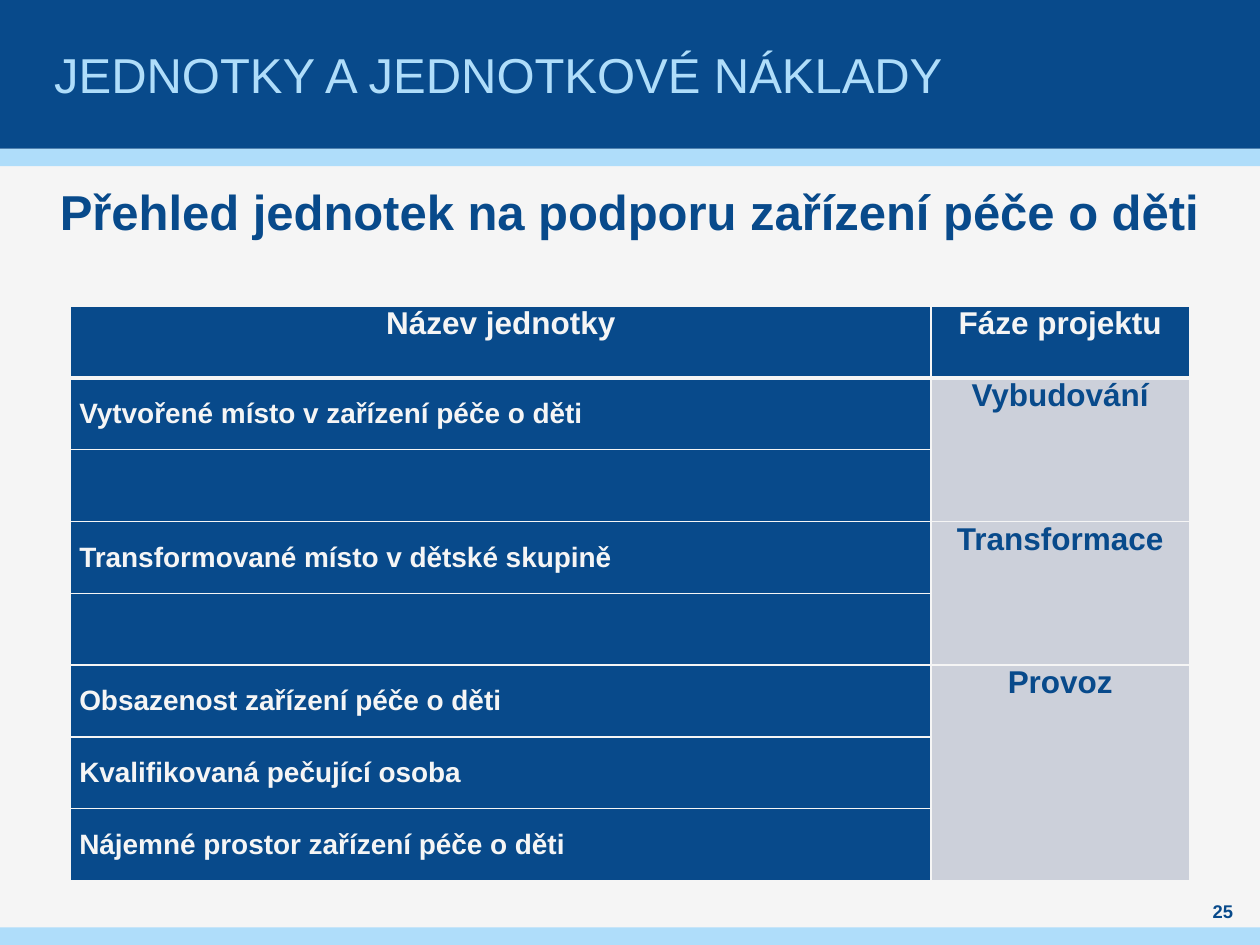
from dataclasses import dataclass

from lxml.etree import SubElement
from pptx import Presentation
from pptx.dml.color import RGBColor
from pptx.enum.shapes import MSO_SHAPE as Shape
from pptx.enum.text import MSO_ANCHOR as Anchor, PP_ALIGN as Align
from pptx.oxml.ns import qn
from pptx.util import Inches, Pt


@dataclass(frozen=True)
class Theme:
    font: str = "Arial"
    navy: str = "084A8B"
    sky: str = "AFDDFA"
    paper: str = "F5F5F5"
    grey: str = "CCD0DA"
    title: float = 28
    label: float = 18
    unit: float = 16
    number: float = 10.5


THEME = Theme()
COLUMNS = (6.83, 2.05)
ROW_HEIGHT = 0.57
HEADERS = ("Název jednotky", "Fáze projektu")
PHASES = (
    ("Vybudování", ("Vytvořené místo v zařízení péče o děti", "")),
    ("Transformace", ("Transformované místo v dětské skupině", "")),
    ("Provoz", (
        "Obsazenost zařízení péče o děti",
        "Kvalifikovaná pečující osoba",
        "Nájemné prostor zařízení péče o děti",
    )),
)


def paint(fill, color):
    fill.solid()
    fill.fore_color.rgb = RGBColor.from_string(color)


def write(frame, text, size, color, bold=True, align=Align.CENTER,
          anchor=Anchor.MIDDLE):
    frame.text = text
    frame.vertical_anchor = anchor
    paragraph = frame.paragraphs[0]
    paragraph.alignment = align
    font = paragraph.font
    font.name, font.size, font.bold = THEME.font, Pt(size), bold
    font.color.rgb = RGBColor.from_string(color)
    return paragraph


def set_margins(holder, side):
    holder.margin_left = holder.margin_right = Inches(side)
    holder.margin_top = holder.margin_bottom = 0


def add_band(slide, top, height, color):
    band = slide.shapes.add_shape(
        Shape.RECTANGLE, 0, Inches(top), Inches(10), Inches(height))
    band.shadow.inherit = False
    paint(band.fill, color)
    band.line.fill.background()


def add_title(slide, text):
    title = slide.shapes.title
    title.left, title.top = Inches(0.39), 0
    title.width, title.height = Inches(9.21), Inches(1.18)
    set_margins(title.text_frame, 0.04)
    write(title.text_frame, text, THEME.title, THEME.sky, False, Align.LEFT)


def add_label(slide, text, left, top, width, height, size):
    frame = slide.shapes.add_textbox(
        Inches(left), Inches(top), Inches(width), Inches(height)).text_frame
    frame.word_wrap = True
    set_margins(frame, 0)
    write(frame, text, size, THEME.navy)


def set_borders(cell, bottom=1, top=1):
    properties = cell._tc.get_or_add_tcPr()
    for side, width in (("L", 1), ("R", 1), ("T", top), ("B", bottom)):
        line = SubElement(properties, qn(f"a:ln{side}"), w=str(Pt(width)))
        solid = SubElement(line, qn("a:solidFill"))
        SubElement(solid, qn("a:srgbClr"), val=THEME.paper)


def fill_cell(cell, text, size, color, background, align=Align.CENTER,
              anchor=Anchor.TOP):
    set_margins(cell, 0.07)
    paragraph = write(cell.text_frame, text, size, color, align=align)
    cell.vertical_anchor = anchor
    paragraph.space_before = paragraph.space_after = Pt(3)
    paint(cell.fill, background)


def add_unit_table(slide):
    row_count = 1 + sum(len(units) for _, units in PHASES)
    table = slide.shapes.add_table(
        row_count, len(COLUMNS), Inches(0.56), Inches(2.43),
        Inches(sum(COLUMNS)), Inches(ROW_HEIGHT * row_count)).table
    for column, width in zip(table.columns, COLUMNS):
        column.width = Inches(width)
    for index, row in enumerate(table.rows):
        row.height = Inches(ROW_HEIGHT)
        for cell in row.cells:
            set_borders(cell, bottom=3 if index == 0 else 1,
                        top=3 if index == 1 else 1)
    for column, header in enumerate(HEADERS):
        fill_cell(table.cell(0, column), header, THEME.label, THEME.paper,
                  THEME.navy)
    first = 1
    for phase, units in PHASES:
        for row, unit in enumerate(units, first):
            fill_cell(table.cell(row, 0), unit, THEME.unit, THEME.paper,
                      THEME.navy, Align.LEFT, Anchor.MIDDLE)
        phase_cell = table.cell(first, 1)
        phase_cell.merge(table.cell(first + len(units) - 1, 1))
        fill_cell(phase_cell, phase, THEME.label, THEME.navy, THEME.grey)
        first += len(units)


def main():
    deck = Presentation()
    deck.slide_width, deck.slide_height = Inches(10), Inches(7.5)
    master = deck.slide_master
    paint(master.background.fill, THEME.paper)
    slide = deck.slides.add_slide(deck.slide_layouts.get_by_name("Title Only"))
    add_band(slide, 1.18, 0.14, THEME.sky)
    add_band(slide, 0, 1.18, THEME.navy)
    add_band(slide, 7.36, 0.14, THEME.sky)
    title = slide.shapes.title._element
    title.getparent().append(title)
    add_title(slide, "JEDNOTKY A JEDNOTKOVÉ NÁKLADY")
    add_label(slide, "25", 9.45, 7.13, 0.51, 0.2, THEME.number)
    add_label(slide, "Přehled jednotek na podporu zařízení péče o děti",
              0.35, 1.39, 9.29, 0.57, THEME.title)
    add_unit_table(slide)
    deck.save("out.pptx")


if __name__ == "__main__":
    main()
